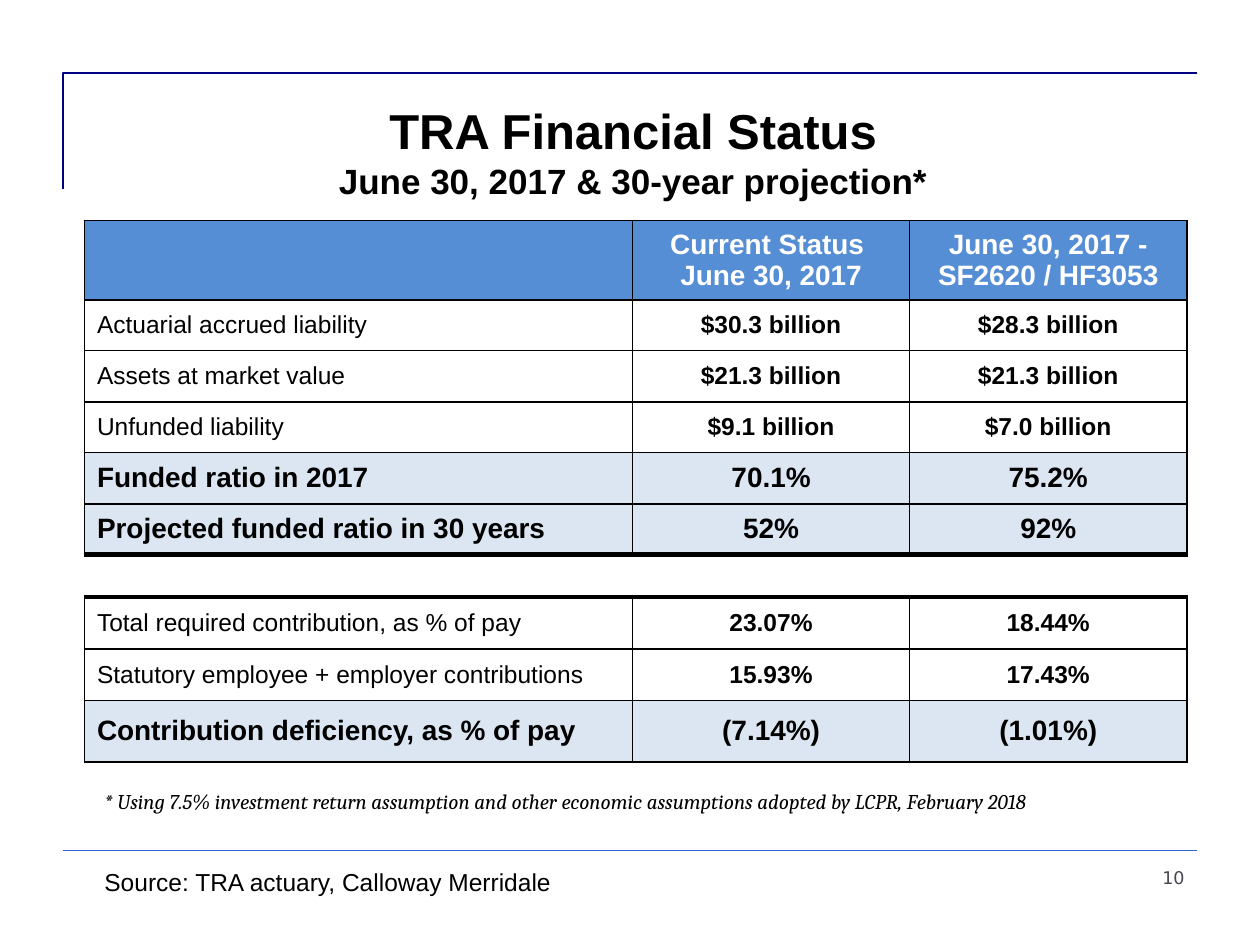
from lxml.etree import SubElement
from pptx import Presentation
from pptx.dml.color import RGBColor
from pptx.enum.shapes import MSO_CONNECTOR as Connector
from pptx.enum.text import MSO_ANCHOR as Anchor, PP_ALIGN as Align
from pptx.oxml.ns import qn
from pptx.util import Inches, Pt

COLORS = {
    "black": "000000", "white": "FFFFFF", "navy": "000080", "rule": "3366CC",
    "header": "558ED5", "highlight": "DCE6F2", "number": "464653",
}

COLUMNS = [4.35, 2.2, 2.2]
HEADER, PLAIN, KEY, GAP = "header", "plain", "key", "gap"
# Each row: kind, height, cell texts
ROWS = [
    (HEADER, 0.63, ["", "Current Status \nJune 30, 2017", "June 30, 2017 -\nSF2620 / HF3053"]),
    (PLAIN, 0.4, ["Actuarial accrued liability", "$30.3 billion", "$28.3 billion"]),
    (PLAIN, 0.41, ["Assets at market value", "$21.3 billion", "$21.3 billion"]),
    (PLAIN, 0.4, ["Unfunded liability", "$9.1 billion", "$7.0 billion"]),
    (KEY, 0.41, ["Funded ratio in 2017", "70.1%", "75.2%"]),
    (KEY, 0.4, ["Projected funded ratio in 30 years", "52%", "92%"]),
    (GAP, 0.34, ["", "", ""]),
    (PLAIN, 0.41, ["Total required contribution, as % of pay", "23.07%", "18.44%"]),
    (PLAIN, 0.41, ["Statutory employee + employer contributions", "15.93%", "17.43%"]),
    (KEY, 0.49, ["Contribution deficiency, as % of pay", "(7.14%)", "(1.01%)"]),
]
FILLS = {HEADER: "header", KEY: "highlight"}


def rgb(name):
    return RGBColor.from_string(COLORS[name])


def write(frame, text, sizes, font="Arial", color="black", bold=False, italic=False, align=Align.LEFT):
    """Write one paragraph per line; sizes holds one size per line or one for all."""
    lines = text.split("\n")
    for index, line in enumerate(lines):
        para = frame.paragraphs[0] if index == 0 else frame.add_paragraph()
        para.alignment = align
        span = para.add_run()
        span.text = line
        span.font.name = font
        span.font.size = Pt(sizes[min(index, len(sizes) - 1)])
        span.font.bold = bold
        span.font.italic = italic
        span.font.color.rgb = rgb(color)


def add_text(page, place, text, sizes, wrap=True, **style):
    box = page.shapes.add_textbox(*map(Inches, place))
    box.text_frame.word_wrap = wrap
    write(box.text_frame, text, sizes, **style)


def add_frame(page):
    """Corner rule above the title and thin rule above the footer."""
    builder = page.shapes.build_freeform(Inches(0.5), Inches(1.5))
    builder.add_line_segments([(Inches(0.5), Inches(0.58)), (Inches(9.5), Inches(0.58))], close=False)
    corner = builder.convert_to_shape()
    corner.shadow.inherit = False
    corner.fill.background()
    corner.line.color.rgb = rgb("navy")
    corner.line.width = Pt(1.5)

    rule = page.shapes.add_connector(Connector.STRAIGHT, Inches(0.5), Inches(6.75), Inches(9.5), Inches(6.75))
    rule.line.color.rgb = rgb("rule")
    rule.line.width = Pt(0.25)
    SubElement(rule.element.spPr, qn("a:effectLst"))


def set_borders(cell, widths):
    """Set left, right, top and bottom borders in points; 0 hides one."""
    properties = cell._tc.get_or_add_tcPr()
    for index, (side, width) in enumerate(zip(("lnL", "lnR", "lnT", "lnB"), widths)):
        border = SubElement(properties, qn(f"a:{side}"), w=str(Pt(width)))
        properties.insert(index, border)
        if width:
            fill = SubElement(border, qn("a:solidFill"))
            SubElement(fill, qn("a:srgbClr"), val=COLORS["black"])
        else:
            SubElement(border, qn("a:noFill"))


def format_cell(cell, kind, text, first):
    if kind in FILLS:
        cell.fill.solid()
        cell.fill.fore_color.rgb = rgb(FILLS[kind])
    else:
        cell.fill.background()
    cell.vertical_anchor = Anchor.MIDDLE
    if kind == GAP:
        cell.margin_top = cell.margin_bottom = 0
    if text:
        write(cell.text_frame, text, [14 if kind == PLAIN else 16],
              color="white" if kind == HEADER else "black",
              bold=kind != PLAIN or not first,
              align=Align.LEFT if first else Align.CENTER)


def add_status_table(page):
    height = sum(row[1] for row in ROWS)
    frame = page.shapes.add_table(len(ROWS), len(COLUMNS), Inches(0.67), Inches(1.75),
                                  Inches(sum(COLUMNS)), Inches(height))
    table = frame.table
    table.first_row = table.horz_banding = False
    for column, width in zip(table.columns, COLUMNS):
        column.width = Inches(width)
    kinds = [row[0] for row in ROWS]
    for index, (kind, height, texts) in enumerate(ROWS):
        table.rows[index].height = Inches(height)
        # Heavy rules border the gap row
        side = 0 if kind == GAP else 1
        top = 3 if GAP in kinds[max(index - 1, 0):index + 1] else 1
        bottom = 3 if GAP in kinds[index:index + 2] else 1
        for position, text in enumerate(texts):
            cell = table.cell(index, position)
            format_cell(cell, kind, text, position == 0)
            set_borders(cell, (side, side, top, bottom))


def main():
    deck = Presentation()
    deck.slide_width, deck.slide_height = Inches(10), Inches(7.5)
    page = deck.slides.add_slide(deck.slide_layouts[6])

    add_frame(page)
    add_status_table(page)

    # Title
    add_text(page, (2.57, 0.75, 4.91, 0.91), "TRA Financial Status\nJune 30, 2017 & 30-year projection*",
             [28, 20], wrap=False, bold=True, align=Align.CENTER)
    # Footer and footnote
    add_text(page, (0.73, 6.83, 7.75, 0.34), "Source: TRA actuary, Calloway Merridale", [14])
    add_text(page, (7.17, 6.83, 2.33, 0.5), "10", [10], font="DejaVu Sans", color="number", align=Align.RIGHT)
    add_text(page, (0.73, 6.21, 8.58, 0.3),
             "* Using 7.5% investment return assumption and other economic assumptions "
             "adopted by LCPR, February 2018", [12], font="Cambria", italic=True)

    deck.save("out.pptx")


if __name__ == "__main__":
    main()
